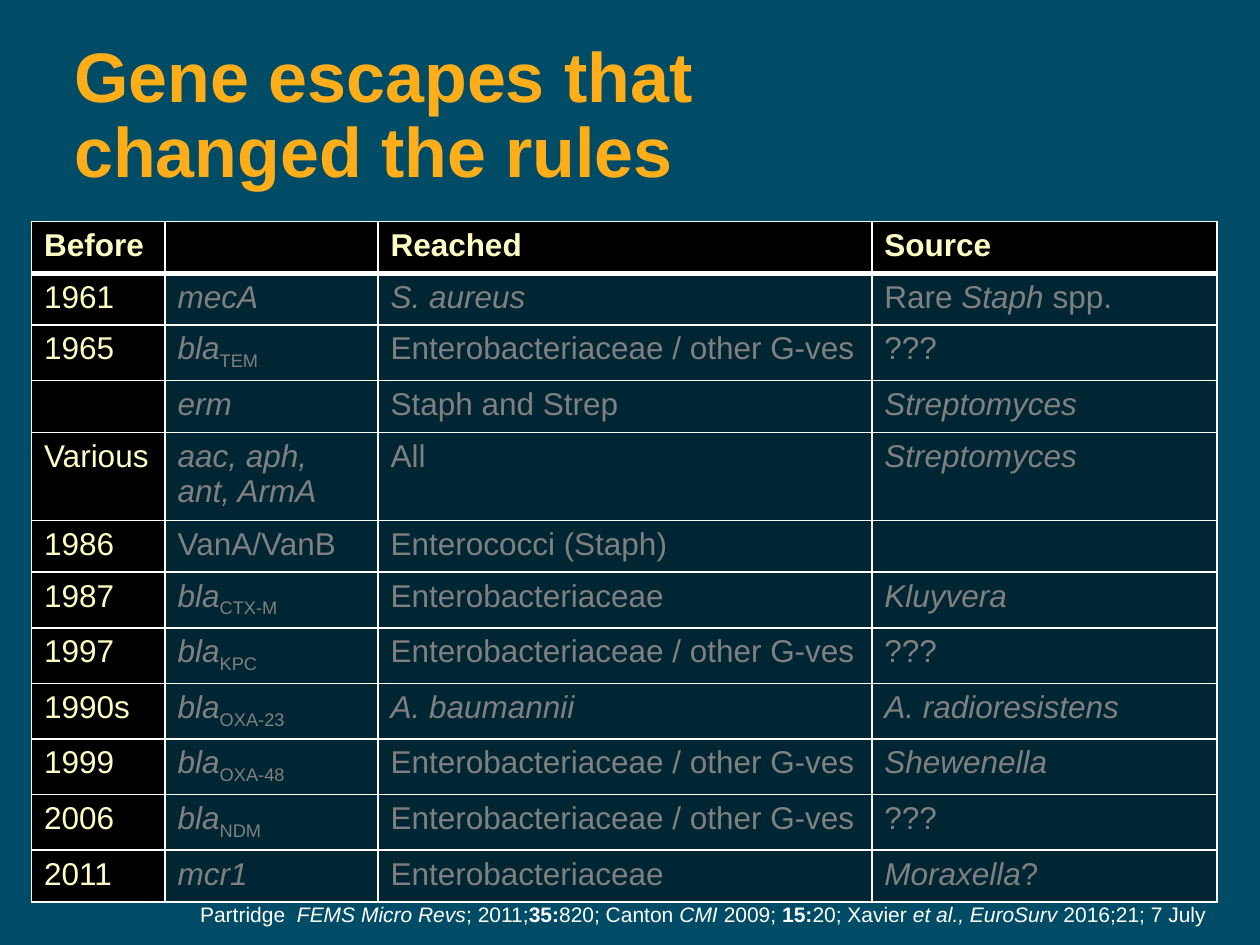
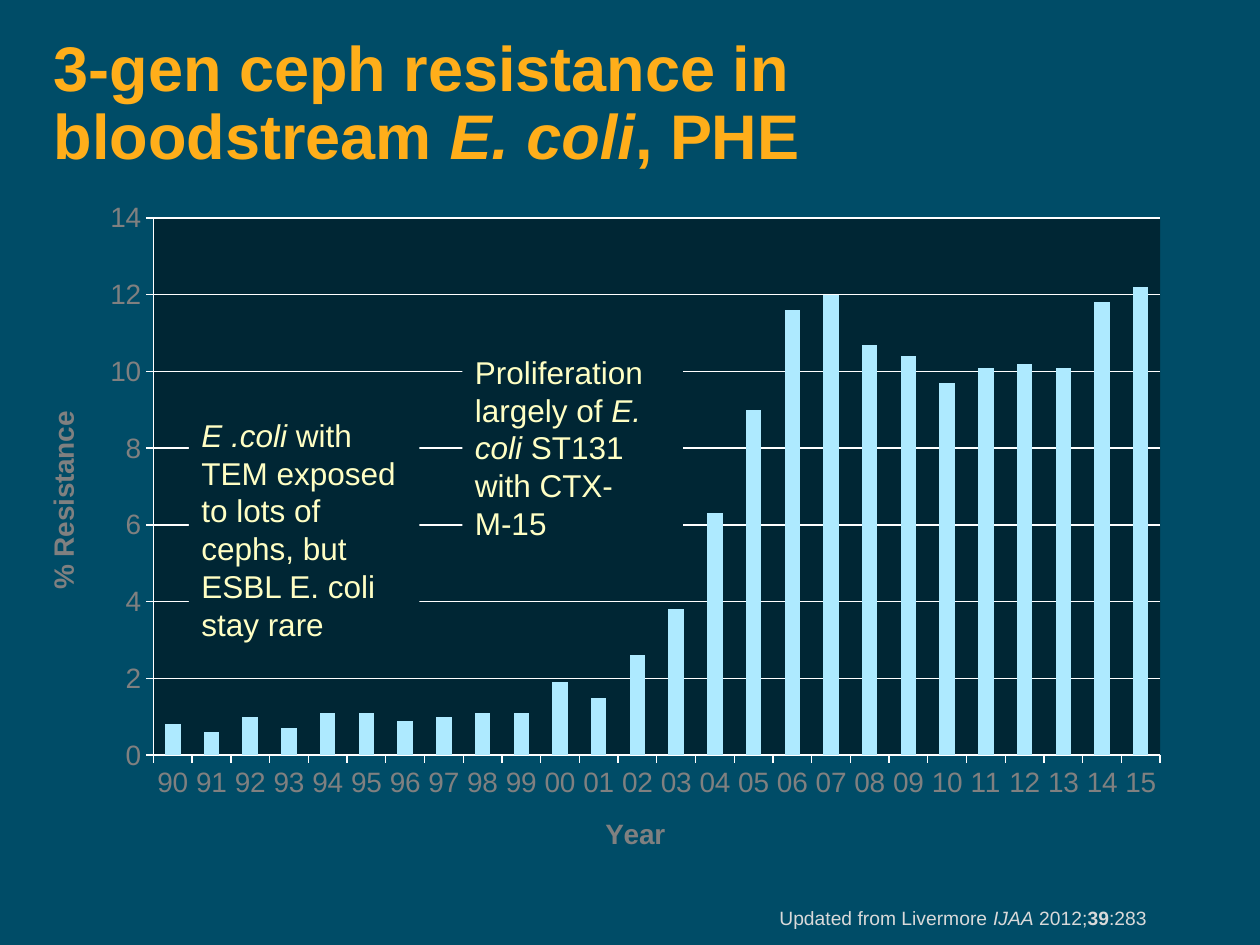
import pptx
import pptx.util
import pptx.dml.color
import pptx.chart.data
import pptx.enum.chart
import pptx.enum.shapes
import pptx.enum.text
import pptx.oxml
import pptx.oxml.ns
from pptx.util import Inches

# Shared look
RGBColor = pptx.dml.color.RGBColor
Pt = pptx.util.Pt
ANCHOR = pptx.enum.text.MSO_ANCHOR
ALIGN = pptx.enum.text.PP_ALIGN
FACE = "Arial"
BACK = RGBColor(0x00, 0x4C, 0x67)
PANEL = RGBColor(0x00, 0x26, 0x34)
BLACK = RGBColor(0x00, 0x00, 0x00)
WHITE = RGBColor(0xFF, 0xFF, 0xFF)
GOLD = RGBColor(0xFF, 0xAE, 0x1A)
CREAM = RGBColor(0xFF, 0xFF, 0xC4)
GREY = RGBColor(0x80, 0x80, 0x80)
PALE = RGBColor(0xD9, 0xD9, 0xD9)
SKY = RGBColor(0xAE, 0xEA, 0xFF)

# Runs are parted by "|"; a leading mark sets the style of a run
MARKS = {"~": {"italic": True}, "^": {"bold": True}, "_": {"sub": True}}

# Slide 1 table
WIDTHS = [1.06, 1.69, 3.92, 2.74]
ENTERO = "Enterobacteriaceae"
WIDE = ENTERO + " / other G-ves"
GENES = [
    ("Before", "", "Reached", "Source"),
    ("1961", "~mecA", "~S. aureus", "Rare |~Staph |spp."),
    ("1965", "~bla|_TEM", WIDE, "???"),
    ("", "~erm", "Staph and Strep", "~Streptomyces"),
    ("Various", "~aac, aph, ant, ArmA", "All", "~Streptomyces"),
    ("1986", "VanA/VanB", "Enterococci (Staph)", ""),
    ("1987", "~bla|_CTX-M", ENTERO, "~Kluyvera"),
    ("1997", "~bla|_KPC", WIDE, "???"),
    ("1990s", "~bla|_OXA-23", "~A. baumannii", "~A. radioresistens"),
    ("1999", "~bla|_OXA-48", WIDE, "~Shewenella"),
    ("2006", "~bla|_NDM", WIDE, "???"),
    ("2011", "~mcr1", ENTERO, "~Moraxella|?"),
]

# Slide 2 chart
YEARS = [f"{year % 100:02d}" for year in range(1990, 2016)]
RATES = [0.8, 0.6, 1, 0.7, 1.1, 1.1, 0.9, 1, 1.1, 1.1, 1.9, 1.5, 2.6,
         3.8, 6.3, 9, 11.6, 12, 10.7, 10.4, 9.7, 10.1, 10.2, 10.1, 11.8, 12.2]


def set_font(font, size, color, **form):
    values = {"name": FACE, "size": Pt(size), "bold": False, "italic": False}
    values.update(form)
    for name, value in values.items():
        setattr(font, name, value)
    font.color.rgb = color


def write(para, text, size, color, **form):
    """Fill a paragraph with marked-up runs."""
    if not text:
        set_font(para.font, size, color)
        return
    for part in text.split("|"):
        style = dict(form)
        if part[0] in MARKS:
            style.update(MARKS[part[0]])
            part = part[1:]
        sub = style.pop("sub", False)
        run = para.add_run()
        run.text = part
        set_font(run.font, size, color, **style)
        if sub:
            run.font._element.set("baseline", "-25000")


def set_frame(frame, pad=(0.1, 0.05), anchor=ANCHOR.TOP, wrap=True):
    side, end = Inches(pad[0]), Inches(pad[1])
    values = {"margin_left": side, "margin_right": side, "margin_top": end,
              "margin_bottom": end, "vertical_anchor": anchor, "word_wrap": wrap}
    for name, value in values.items():
        setattr(frame, name, value)


def add_text(slide, box, text, size, color, align=ALIGN.LEFT, line=1.0,
             bold=False, **layout):
    shape = slide.shapes.add_textbox(*map(Inches, box))
    set_frame(shape.text_frame, **layout)
    para = shape.text_frame.paragraphs[0]
    para.alignment = align
    para.line_spacing = line
    write(para, text, size, color, bold=bold)


def add_title(slide, box, text, size, **layout):
    add_text(slide, box, text, size, GOLD, line=0.9, bold=True, **layout)


def add_note(slide, box, text):
    """Plain panel that covers the grid lines behind a remark."""
    shape = slide.shapes.add_shape(
        pptx.enum.shapes.MSO_SHAPE.RECTANGLE, *map(Inches, box))
    shape.shadow.inherit = False
    shape.fill.solid()
    shape.fill.fore_color.rgb = PANEL
    shape.line.fill.background()
    set_frame(shape.text_frame)
    para = shape.text_frame.paragraphs[0]
    para.alignment = ALIGN.LEFT
    write(para, text, 18, CREAM)


def set_edges(cell, top, base):
    edges = {"lnL": 1, "lnR": 1, "lnT": top, "lnB": base}
    props = cell._tc.get_or_add_tcPr()
    for spot, (tag, width) in enumerate(edges.items()):
        props.insert(spot, pptx.oxml.parse_xml(
            f'<a:{tag} {pptx.oxml.ns.nsdecls("a")} w="{Pt(width)}">'
            f'<a:solidFill><a:srgbClr val="{WHITE}"/></a:solidFill></a:{tag}>'))


def add_grid(slide, left, top, widths, rows, height):
    frame = slide.shapes.add_table(
        len(rows), len(widths), Inches(left), Inches(top),
        Inches(sum(widths)), Inches(height * len(rows)))
    table = frame.table
    for col, width in zip(table.columns, widths):
        col.width = Inches(width)
    for r, row in enumerate(rows):
        table.rows[r].height = Inches(height)
        for c, text in enumerate(row):
            cell = table.cell(r, c)
            head = r == 0 or c == 0
            cell.fill.solid()
            cell.fill.fore_color.rgb = BLACK if head else PANEL
            set_edges(cell, 3 if r == 1 else 1, 3 if r == 0 else 1)
            write(cell.text_frame.paragraphs[0], text, 18,
                  CREAM if head else GREY, bold=r == 0)


def set_axis(axis, title):
    axis.major_tick_mark = pptx.enum.chart.XL_TICK_MARK.OUTSIDE
    axis.minor_tick_mark = pptx.enum.chart.XL_TICK_MARK.NONE
    axis.format.line.color.rgb = WHITE
    axis.format.line.width = Pt(0.75)
    set_font(axis.tick_labels.font, 16, GREY)
    write(axis.axis_title.text_frame.paragraphs[0], title, 16, GREY, bold=True)


def set_plot(chart, place):
    """Fix the inner plot area and fill it."""
    area = chart._chartSpace.chart.plotArea
    for old in area.findall(pptx.oxml.ns.qn("c:layout")):
        area.remove(old)
    spots = "".join(f'<c:{tag} val="{val}"/>'
                    for tag, val in zip(("x", "y", "w", "h"), place))
    area.insert(0, pptx.oxml.parse_xml(
        f'<c:layout {pptx.oxml.ns.nsdecls("c")}><c:manualLayout>'
        '<c:layoutTarget val="inner"/><c:xMode val="edge"/>'
        f'<c:yMode val="edge"/>{spots}</c:manualLayout></c:layout>'))
    area.append(pptx.oxml.parse_xml(
        f'<c:spPr {pptx.oxml.ns.nsdecls("c", "a")}><a:solidFill>'
        f'<a:srgbClr val="{PANEL}"/></a:solidFill></c:spPr>'))


def add_bars(slide, box, cats, vals):
    data = pptx.chart.data.CategoryChartData()
    data.categories = cats
    data.add_series("Series 1", vals)
    chart = slide.shapes.add_chart(
        pptx.enum.chart.XL_CHART_TYPE.COLUMN_CLUSTERED,
        *map(Inches, box), data).chart
    chart.has_legend = False
    chart.has_title = False
    set_font(chart.font, 16, GREY)
    plot = chart.plots[0]
    plot.gap_width = 150
    plot.vary_by_categories = False
    fill = plot.series[0].format.fill
    fill.solid()
    fill.fore_color.rgb = SKY
    set_axis(chart.category_axis, "Year")
    axis = chart.value_axis
    set_axis(axis, "% Resistance")
    scale = {"minimum_scale": 0, "maximum_scale": 14, "major_unit": 2,
             "has_major_gridlines": True}
    for name, value in scale.items():
        setattr(axis, name, value)
    grid = axis.major_gridlines.format.line
    grid.color.rgb = WHITE
    grid.width = Pt(0.75)
    set_plot(chart, (0.1, 0.03, 0.88, 0.8))


def add_slide(deck):
    slide = deck.slides.add_slide(deck.slide_layouts[6])
    slide.background.fill.solid()
    slide.background.fill.fore_color.rgb = BACK
    return slide


def main():
    deck = pptx.Presentation()
    deck.slide_width, deck.slide_height = Inches(10), Inches(7.5)

    # Slide 1: table of gene escapes
    slide = add_slide(deck)
    add_title(slide, (0.59, 0.58, 6.91, 0.95),
              "Gene escapes that changed the rules", 40,
              pad=(0, 0), anchor=ANCHOR.BOTTOM)
    add_grid(slide, 0.25, 1.76, WIDTHS, GENES, 0.41)
    add_text(slide, (1.49, 7.11, 8.26, 0.3),
             "Partridge  |~FEMS Micro Revs|; 2011;|^35:|820; Canton |~CMI |2009; "
             "|^15:|20; Xavier |~et al., EuroSurv |2016;21; 7 July",
             12, WHITE, wrap=False)

    # Slide 2: chart of resistance by year
    slide = add_slide(deck)
    add_title(slide, (0.33, 0.25, 7.92, 1.17),
              "3-gen ceph resistance in bloodstream |~E. coli|, PHE", 36,
              anchor=ANCHOR.MIDDLE)
    add_bars(slide, (0.31, 1.57, 9.08, 5.33), YEARS, RATES)
    add_text(slide, (0.75, 7.06, 8.35, 0.32),
             "Updated from Livermore |~IJAA| 2012;|^39|:283", 11, PALE,
             align=ALIGN.RIGHT, line=0.9, pad=(0, 0), anchor=ANCHOR.BOTTOM)
    add_note(slide, (1.5, 3.25, 1.83, 1.92),
             "~E .coli |with TEM exposed to lots of cephs, "
             "but ESBL E. coli stay rare")
    add_note(slide, (3.67, 2.75, 1.75, 1.62),
             "Proliferation largely of |~E. coli |ST131 with CTX-M-15")

    deck.save("out.pptx")


if __name__ == "__main__":
    main()
